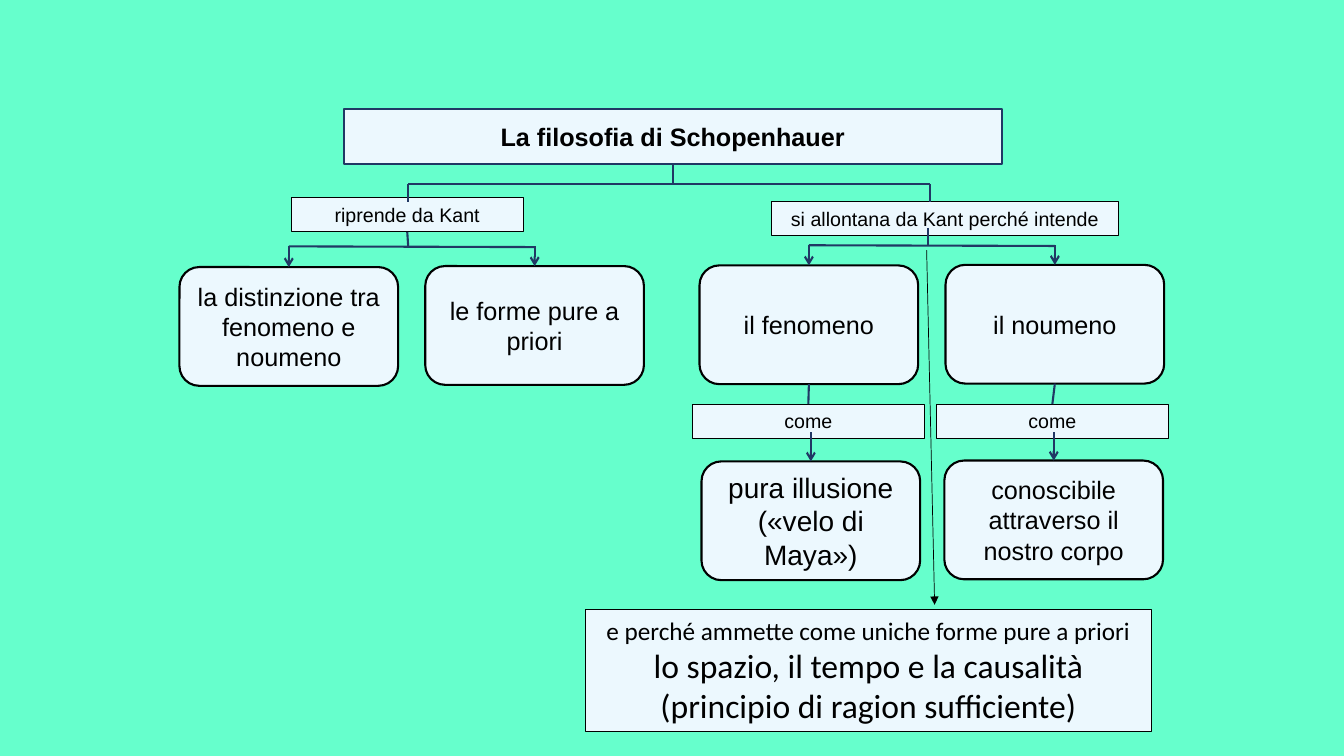
from lxml.etree import SubElement
from pptx import Presentation
from pptx.dml.color import RGBColor
from pptx.enum.shapes import MSO_CONNECTOR as CONN, MSO_SHAPE as SHAPE
from pptx.enum.text import MSO_ANCHOR as ANCHOR, MSO_AUTO_SIZE as FIT, PP_ALIGN as ALIGN
from pptx.oxml.ns import qn
from pptx.util import Pt

MINT = RGBColor(0x66, 0xFF, 0xCC)
PALE = RGBColor(0xEC, 0xF8, 0xFE)
NAVY = RGBColor(0x20, 0x38, 0x64)
BLACK = RGBColor(0, 0, 0)
BOX_W, BOX_H = 156.2, 84.8
LABEL_W, LABEL_H = 165.6, 24.5


def write(sp, text, size=18, font="Arial", bold=False, edge=BLACK, width=1.5,
          anchor=ANCHOR.MIDDLE, fit=FIT.NONE):
    sp.fill.solid()
    sp.fill.fore_color.rgb = PALE
    sp.line.color.rgb = edge
    sp.line.width = Pt(width)
    tf = sp.text_frame
    tf.word_wrap = True
    tf.auto_size = fit
    tf.vertical_anchor = anchor
    for i, line in enumerate(text.split("\n")):
        p = tf.paragraphs[0] if i == 0 else tf.add_paragraph()
        p.alignment = ALIGN.CENTER
        r = p.add_run()
        r.text = line
        r.font.name = font
        r.font.size = Pt(size)
        r.font.bold = bold
        r.font.color.rgb = BLACK
    return sp


def link(x1, y1, x2, y2, start=None, end=None, head=None, color=NAVY, width=1.5):
    c = s.shapes.add_connector(CONN.STRAIGHT, Pt(x1), Pt(y1), Pt(x2), Pt(y2))
    if start is not None:
        c.begin_connect(start, 2)
    if end is not None:
        c.end_connect(end, 0)
    c.line.color.rgb = color
    c.line.width = Pt(width)
    if head:
        SubElement(c.line._get_or_add_ln(), qn("a:tailEnd"), type=head)
    SubElement(c._element.spPr, qn("a:effectLst"))


prs = Presentation()
prs.slide_width, prs.slide_height = Pt(960), Pt(540)
s = prs.slides.add_slide(prs.slide_layouts[5])
s.background.fill.solid()
s.background.fill.fore_color.rgb = MINT

title = s.shapes.title
title.left, title.top, title.width, title.height = Pt(245.5), Pt(77.8), Pt(470.2), Pt(39.6)
geom = SubElement(title._element.spPr, qn("a:prstGeom"), prst="roundRect")
SubElement(geom, qn("a:avLst"))
write(title, "La filosofia di Schopenhauer", bold=True, edge=NAVY)

labels = []
for text, x, y, w in [
    ("riprende da Kant", 208.1, 141.1, LABEL_W),
    ("si allontana da Kant perché intende", 550.8, 144, 248.4),
    ("come", 494.6, 288.7, LABEL_W),
    ("come", 668.9, 288.7, LABEL_W),
]:
    sp = s.shapes.add_textbox(Pt(x), Pt(y), Pt(w), Pt(LABEL_H))
    labels.append(write(sp, text, size=14, width=0.75, anchor=ANCHOR.TOP,
                        fit=FIT.SHAPE_TO_FIT_TEXT))
kant, away, come_phen, come_noum = labels

boxes = []
for text, x, y, size in [
    ("la distinzione tra fenomeno e noumeno", 128.2, 190.8, 18),
    ("le forme pure a priori", 303.8, 190.1, 18),
    ("il fenomeno", 499.7, 189.6, 18),
    ("il noumeno", 675.4, 189.2, 18),
    ("pura illusione\n(«velo di Maya»)", 501.1, 329.6, 20),
    ("conoscibile attraverso il nostro corpo", 674.6, 329, 18),
]:
    sp = s.shapes.add_shape(SHAPE.ROUNDED_RECTANGLE, Pt(x), Pt(y), Pt(BOX_W), Pt(BOX_H))
    sp.shadow.inherit = False
    boxes.append(write(sp, text, size=size))
distinction, forms, phenomenon, noumenon, illusion, body = boxes

causality = s.shapes.add_textbox(Pt(418.3), Pt(435.6), Pt(403.9), Pt(87.1))
write(causality, "e perché ammette come uniche forme pure a priori ", font="Calibri",
      width=0.75, anchor=ANCHOR.TOP, fit=FIT.SHAPE_TO_FIT_TEXT)
r = causality.text_frame.paragraphs[0].add_run()
r.text = "lo spazio, il tempo e la causalità (principio di ragion sufficiente)"
r.font.name = "Calibri"
r.font.size = Pt(24)
r.font.color.rgb = BLACK

link(480.6, 117.4, 480.6, 131.4, start=title)
link(291.6, 131.4, 664.6, 131.4)
link(291.6, 131.4, 291.6, 144)
link(664.6, 131.4, 664.6, 144)
link(291.6, 165.6, 291.6, 176.4, start=kant)
link(663.1, 162.7, 663.1, 175.7)

for y, left, right in [(176, distinction, forms), (175.2, phenomenon, noumenon)]:
    x1, x2 = [sp.left.pt + BOX_W / 2 for sp in (left, right)]
    link(x1, y, x2, y + 0.5)
    link(x1, y, x1, left.top.pt, end=left, head="arrow")
    link(x2, y, x2, right.top.pt, end=right, head="arrow")

for upper, label, lower in [(phenomenon, come_phen, illusion), (noumenon, come_noum, body)]:
    x = lower.left.pt + BOX_W / 2
    link(x, 274.4, x, 288.7, start=upper, end=label)
    link(x, 308.9, x, lower.top.pt, end=lower, head="arrow")

link(661.9, 178.6, 667.6, 432, head="triangle", color=BLACK, width=0.5)

prs.save("out.pptx")
